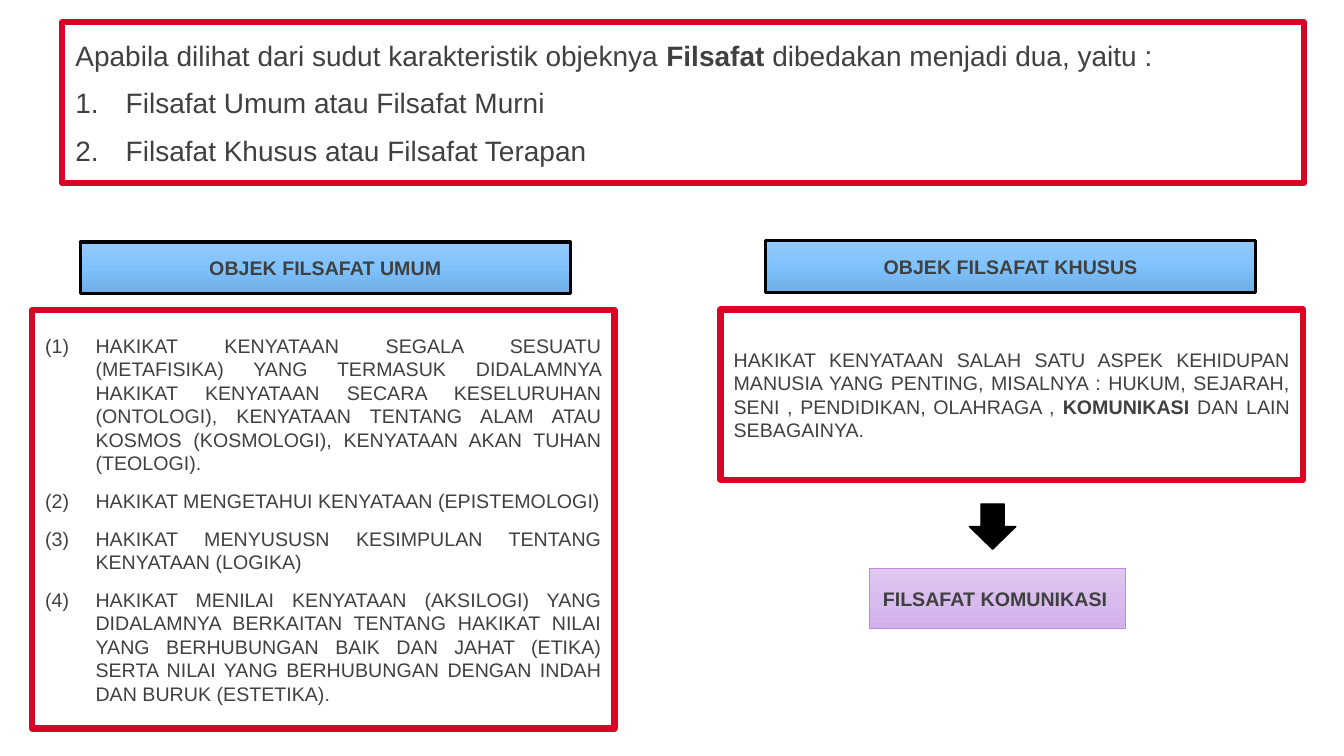
from copy import deepcopy

from lxml import etree
from pptx import Presentation
from pptx.dml.color import RGBColor
from pptx.enum import shapes, text
from pptx.oxml import ns
from pptx.util import Cm, Pt

HEX = {
    "white": "FFFFFF", "red": "D70627", "black": "000000", "ink": "404040",
    "violet": "BE8BE2",
}
BLUES = ["95CAFA", "7FC2FE", "6EADE5"]
LILACS = ["E0C9F2", "D8BCEE", "D3B1ED"]
KIND = shapes.MSO_SHAPE
ALIGN = text.PP_ALIGN

INTRO = [
    [("Apabila dilihat dari sudut karakteristik objeknya ", False),
     ("Filsafat ", True),
     ("dibedakan menjadi dua, yaitu :", False)],
    [("Filsafat Umum atau Filsafat Murni", False)],
    [("Filsafat Khusus atau Filsafat Terapan", False)],
]
GENERAL = [
    [("HAKIKAT KENYATAAN SEGALA SESUATU (METAFISIKA) YANG TERMASUK "
      "DIDALAMNYA HAKIKAT KENYATAAN SECARA KESELURUHAN (ONTOLOGI), "
      "KENYATAAN TENTANG ALAM ATAU KOSMOS (KOSMOLOGI), KENYATAAN AKAN "
      "TUHAN (TEOLOGI).", False)],
    [("HAKIKAT MENGETAHUI KENYATAAN (EPISTEMOLOGI)", False)],
    [("HAKIKAT MENYUSUSN KESIMPULAN TENTANG KENYATAAN (LOGIKA)", False)],
    [("HAKIKAT MENILAI KENYATAAN (AKSILOGI) YANG DIDALAMNYA BERKAITAN "
      "TENTANG HAKIKAT NILAI YANG BERHUBUNGAN BAIK DAN JAHAT (ETIKA) SERTA "
      "NILAI YANG BERHUBUNGAN DENGAN INDAH DAN BURUK (ESTETIKA).", False)],
]
SPECIAL = [
    [("HAKIKAT KENYATAAN SALAH SATU ASPEK KEHIDUPAN MANUSIA YANG PENTING, "
      "MISALNYA : HUKUM, SEJARAH, SENI , PENDIDIKAN, OLAHRAGA , ", False),
     ("KOMUNIKASI", True),
     (" DAN LAIN SEBAGAINYA.", False)],
]


def color(name):
    return RGBColor.from_string(HEX[name])


def add_form(slide, kind, area, fill, line, width):
    form = slide.shapes.add_shape(kind, *[Cm(n) for n in area])
    form.shadow.inherit = False
    form.line.color.rgb = color(line)
    form.line.width = Pt(width)
    if isinstance(fill, list):
        shade(form, fill)
    else:
        form.fill.solid()
        form.fill.fore_color.rgb = color(fill)
    return form


def shade(form, tones):
    """Fill from top to bottom with evenly spaced tones."""
    form.fill.gradient()
    form.fill.gradient_angle = 270
    stops = form.fill.gradient_stops
    first = form.element.spPr.find(".//" + ns.qn("a:gs"))
    for _ in range(len(tones) - len(stops)):
        first.addnext(deepcopy(first))
    for i, (stop, tone) in enumerate(zip(form.fill.gradient_stops, tones)):
        stop.position = i / (len(tones) - 1)
        stop.color.rgb = RGBColor.from_string(tone)


def number(para, style):
    props = para._p.get_or_add_pPr()
    props.set("marL", str(Cm(1.27)))
    props.set("indent", str(Cm(-1.27)))
    etree.SubElement(props, ns.qn("a:buFont"), typeface="+mj-lt")
    etree.SubElement(props, ns.qn("a:buAutoNum"), type=style)


def write(form, paras, size, align=ALIGN.JUSTIFY, style=None, start=0):
    """Write paragraphs; those from index start on are numbered."""
    frame = form.text_frame
    frame.word_wrap = True
    frame.vertical_anchor = text.MSO_ANCHOR.MIDDLE
    frame.margin_left = frame.margin_right = Cm(0.33)
    frame.margin_top = frame.margin_bottom = Cm(0.18)
    for i, runs in enumerate(paras):
        para = frame.add_paragraph() if i else frame.paragraphs[0]
        para.alignment = align
        if i:
            para.space_before = Pt(10)
        if style and i >= start:
            number(para, style)
        for words, bold in runs:
            run = para.add_run()
            run.text = words
            run.font.name = "Arial"
            run.font.size = Pt(size)
            run.font.bold = bold
            run.font.color.rgb = color("ink")


def add_panel(slide, area, paras, size=14, **rules):
    panel = add_form(slide, KIND.RECTANGLE, area, "white", "red", 4.5)
    write(panel, paras, size, **rules)


def add_label(slide, area, words, tones, line, width, align=ALIGN.CENTER):
    label = add_form(slide, KIND.RECTANGLE, area, tones, line, width)
    write(label, [[(words, True)]], 14, align)


def main():
    deck = Presentation()
    deck.slide_width, deck.slide_height = Cm(33.87), Cm(19.05)
    slide = deck.slides.add_slide(deck.slide_layouts[6])

    # Introduction
    add_panel(slide, (1.57, 0.56, 31.29, 4.06), INTRO, 20,
              style="arabicPeriod", start=1)

    # General philosophy
    add_panel(slide, (0.81, 7.82, 14.68, 10.54), GENERAL,
              style="arabicParenBoth")
    add_label(slide, (2.03, 6.1, 12.34, 1.3), "OBJEK FILSAFAT UMUM",
              BLUES, "black", 2.25)

    # Special philosophy
    add_label(slide, (19.3, 6.07, 12.34, 1.3), "OBJEK FILSAFAT KHUSUS",
              BLUES, "black", 2.25)
    add_panel(slide, (18.16, 7.8, 14.68, 4.29), SPECIAL)

    # Result
    add_label(slide, (21.92, 14.33, 6.43, 1.5), "FILSAFAT KOMUNIKASI",
              LILACS, "violet", 0.5, ALIGN.JUSTIFY)
    add_form(slide, KIND.DOWN_ARROW, (24.43, 12.7, 1.17, 1.14),
             "black", "black", 1)

    deck.save("out.pptx")


if __name__ == "__main__":
    main()
